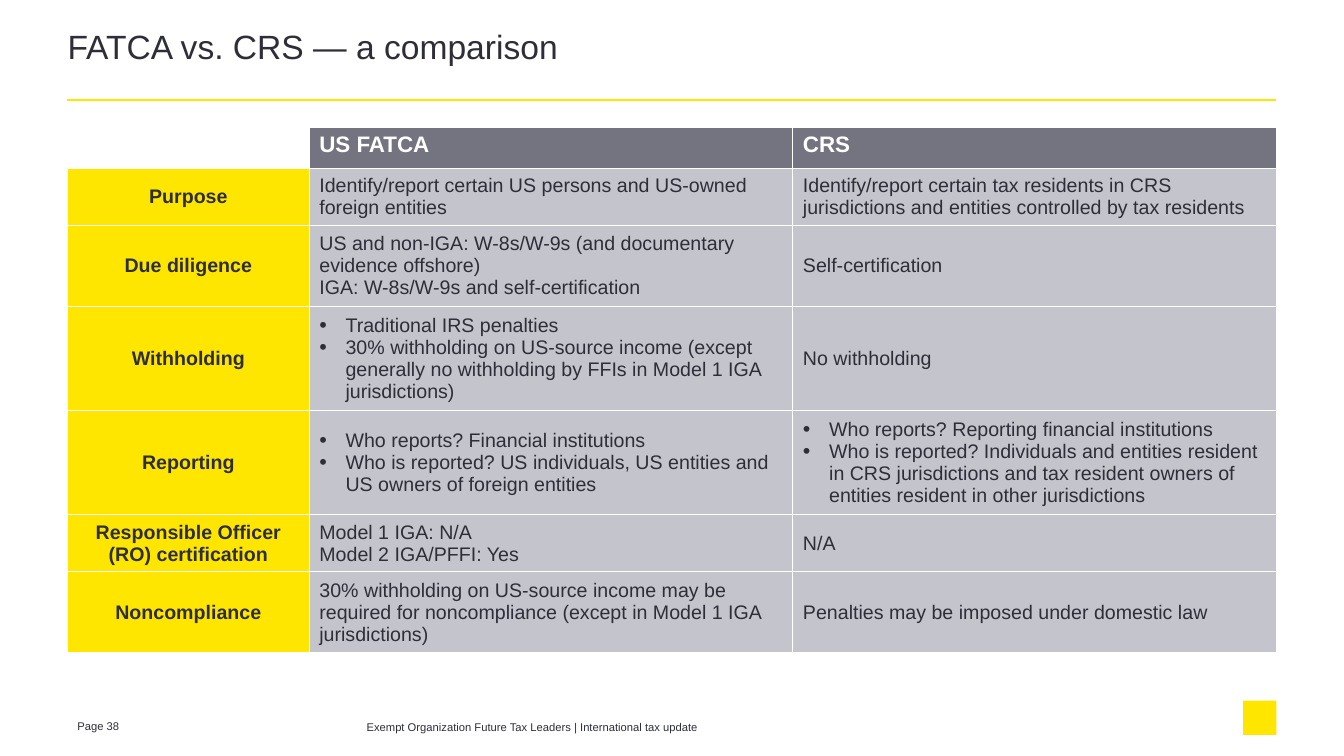
from lxml.etree import SubElement
from pptx import Presentation
from pptx.dml.color import RGBColor
from pptx.enum.shapes import MSO_CONNECTOR, MSO_SHAPE
from pptx.enum.text import MSO_ANCHOR, MSO_AUTO_SIZE, PP_ALIGN
from pptx.oxml.ns import qn
from pptx.util import Inches, Pt

COLORS = {
    "yellow": "FFE600",
    "dark": "2E2E38",
    "header": "747480",
    "body": "C4C4CD",
    "white": "FFFFFF",
}
COLUMN_WIDTHS = [2.4, 4.8, 4.8]
ROW_HEIGHTS = [0.41, 0.54, 0.76, 0.98, 0.98, 0.54, 0.76]
BULLET = "• "
COMPARISON = [
    ("", ["US FATCA"], ["CRS"]),
    (
        "Purpose",
        ["Identify/report certain US persons and US-owned foreign entities"],
        ["Identify/report certain tax residents in CRS jurisdictions and entities controlled by tax residents"],
    ),
    (
        "Due diligence",
        [
            "US and non-IGA: W-8s/W-9s (and documentary evidence offshore)",
            "IGA: W-8s/W-9s and self-certification",
        ],
        ["Self-certification"],
    ),
    (
        "Withholding",
        [
            "• Traditional IRS penalties",
            "• 30% withholding on US-source income (except generally no withholding by FFIs in Model 1 IGA jurisdictions)",
        ],
        ["No withholding"],
    ),
    (
        "Reporting",
        [
            "• Who reports? Financial institutions",
            "• Who is reported? US individuals, US entities and US owners of foreign entities",
        ],
        [
            "• Who reports? Reporting financial institutions",
            "• Who is reported? Individuals and entities resident in CRS jurisdictions and tax resident owners of entities resident in other jurisdictions",
        ],
    ),
    ("Responsible Officer (RO) certification", ["Model 1 IGA: N/A", "Model 2 IGA/PFFI: Yes"], ["N/A"]),
    (
        "Noncompliance",
        ["30% withholding on US-source income may be required for noncompliance (except in Model 1 IGA jurisdictions)"],
        ["Penalties may be imposed under domestic law"],
    ),
]


class SlideBuilder:
    font_name = "Arial"

    def __init__(self, slide):
        self.slide = slide

    def color(self, name):
        return RGBColor.from_string(COLORS[name])

    def paragraph(self, para, text, size, color="dark", bold=False, align=PP_ALIGN.LEFT):
        if text.startswith(BULLET):
            text = text.removeprefix(BULLET)
            self.bullet(para)
        para.text = text
        para.alignment = align
        para.font.name = self.font_name
        para.font.size = Pt(size)
        para.font.bold = bold
        para.font.color.rgb = self.color(color)

    def bullet(self, para):
        properties = para._p.get_or_add_pPr()
        properties.set("marL", str(Inches(0.26)))
        properties.set("indent", str(-Inches(0.26)))
        SubElement(properties, qn("a:buSzPct"), val="110000")
        SubElement(properties, qn("a:buFont"), typeface=self.font_name)
        SubElement(properties, qn("a:buChar"), char=BULLET.strip())

    def title(self, text, left, top, width, height):
        title = self.slide.shapes.title
        title.left, title.top = Inches(left), Inches(top)
        title.width, title.height = Inches(width), Inches(height)
        frame = title.text_frame
        frame.auto_size = MSO_AUTO_SIZE.NONE
        frame.vertical_anchor = MSO_ANCHOR.TOP
        frame.margin_left = frame.margin_top = frame.margin_right = frame.margin_bottom = 0
        para = frame.paragraphs[0]
        self.paragraph(para, text, 24)
        para.line_spacing = 0.85

    def text(self, text, left, top, width, height):
        box = self.slide.shapes.add_textbox(Inches(left), Inches(top), Inches(width), Inches(height))
        box.text_frame.word_wrap = True
        box.text_frame.vertical_anchor = MSO_ANCHOR.MIDDLE
        self.paragraph(box.text_frame.paragraphs[0], text, 8)

    def rule(self, left, top, right):
        line = self.slide.shapes.add_connector(
            MSO_CONNECTOR.STRAIGHT, Inches(left), Inches(top), Inches(right), Inches(top)
        )
        line.line.color.rgb = self.color("yellow")
        line.line.width = Pt(1.5)
        SubElement(line._element.spPr, qn("a:effectLst"))

    def block(self, left, top, width, height):
        block = self.slide.shapes.add_shape(
            MSO_SHAPE.RECTANGLE, Inches(left), Inches(top), Inches(width), Inches(height)
        )
        block.shadow.inherit = False
        block.fill.solid()
        block.fill.fore_color.rgb = self.color("yellow")
        block.line.fill.background()

    def cell(self, cell, lines, fill, size, color="dark", bold=False, align=PP_ALIGN.LEFT, anchor=MSO_ANCHOR.MIDDLE):
        properties = cell._tc.get_or_add_tcPr()
        for side in ("lnL", "lnR", "lnT", "lnB"):
            border = SubElement(properties, qn(f"a:{side}"), w=str(Pt(1)))
            solid = SubElement(border, qn("a:solidFill"))
            SubElement(solid, qn("a:srgbClr"), val=COLORS["white"])
        cell.fill.solid()
        cell.fill.fore_color.rgb = self.color(fill)
        cell.vertical_anchor = anchor
        frame = cell.text_frame
        for index, line in enumerate(lines):
            para = frame.add_paragraph() if index else frame.paragraphs[0]
            self.paragraph(para, line, size, color, bold, align)

    def table(self, rows, left, top):
        frame = self.slide.shapes.add_table(
            len(rows), len(COLUMN_WIDTHS), Inches(left), Inches(top),
            Inches(sum(COLUMN_WIDTHS)), Inches(sum(ROW_HEIGHTS)),
        )
        table = frame.table
        table.horz_banding = False
        for column, width in zip(table.columns, COLUMN_WIDTHS):
            column.width = Inches(width)
        for row, height in zip(table.rows, ROW_HEIGHTS):
            row.height = Inches(height)
        for row_index, (topic, *answers) in enumerate(rows):
            topic_fill = "yellow" if row_index else "white"
            self.cell(table.cell(row_index, 0), [topic], topic_fill, 14, bold=True, align=PP_ALIGN.CENTER)
            for column_index, lines in enumerate(answers, 1):
                cell = table.cell(row_index, column_index)
                if row_index:
                    self.cell(cell, lines, "body", 14)
                else:
                    self.cell(cell, lines, "header", 16, "white", bold=True, anchor=MSO_ANCHOR.TOP)


def main():
    deck = Presentation()
    deck.slide_width, deck.slide_height = Inches(13.34), Inches(7.5)
    page = SlideBuilder(deck.slides.add_slide(deck.slide_layouts[5]))
    page.block(12.34, 6.95, 0.33, 0.34)
    page.text("Page 38", 0.67, 7.08, 0.73, 0.24)
    page.text("Exempt Organization Future Tax Leaders | International tax update", 3.54, 7.09, 6.67, 0.24)
    page.rule(0.67, 0.99, 12.67)
    page.title("FATCA vs. CRS — a comparison", 0.67, 0.32, 12.01, 0.65)
    page.table(COMPARISON, 0.67, 1.26)
    deck.save("out.pptx")


if __name__ == "__main__":
    main()
